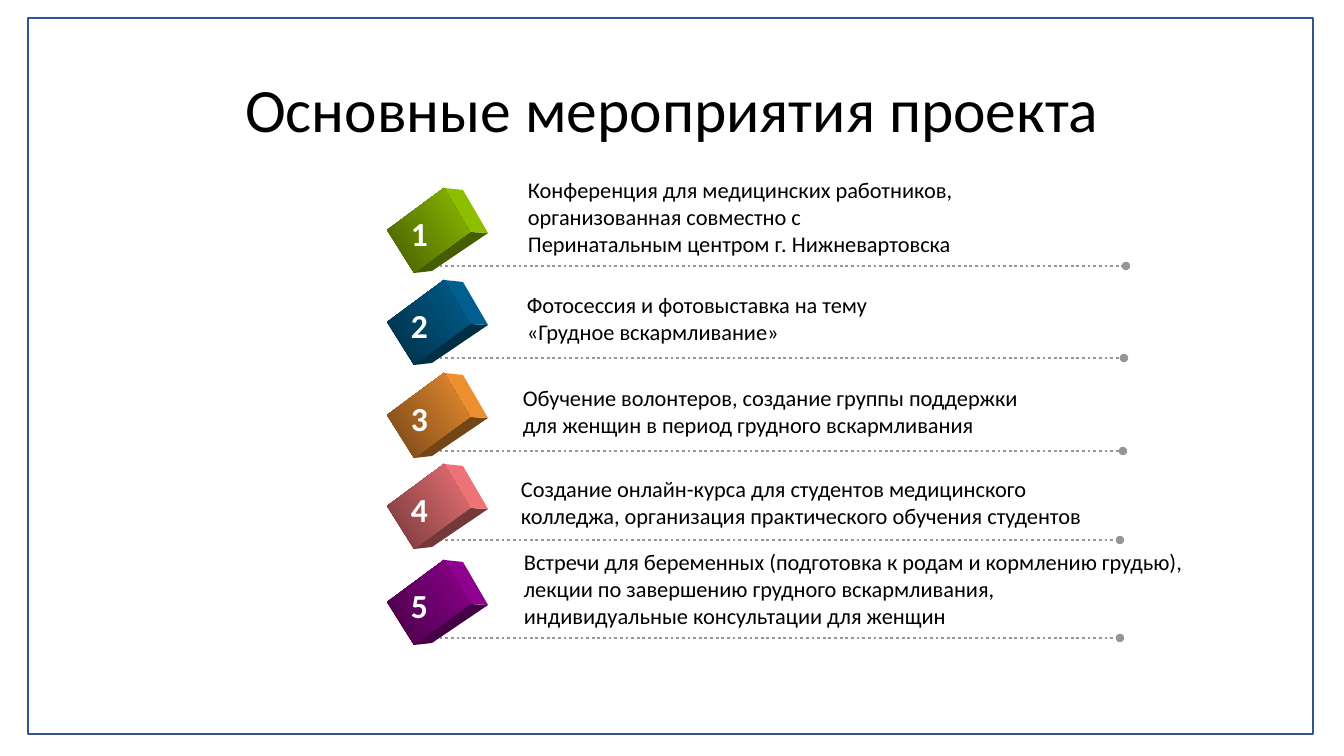
from lxml.etree import SubElement
from pptx import Presentation
from pptx.dml.color import RGBColor
from pptx.enum.dml import MSO_LINE_DASH_STYLE as DASH
from pptx.enum.shapes import MSO_CONNECTOR as CONN, MSO_SHAPE as SHAPE
from pptx.enum.text import MSO_ANCHOR as ANCHOR, PP_ALIGN as ALIGN
from pptx.oxml.ns import qn
from pptx.util import Pt

SCALE = 914400 / 100.8


def px(n):
    return round(n * SCALE)


def rgb(color):
    return RGBColor.from_string(color)


def shade(color, factor):
    return "".join(f"{round(v * factor):02X}" for v in bytes.fromhex(color))


class Deck:
    font = "Calibri"
    black, white, grey, blue = "000000", "FFFFFF", "969696", "325491"

    def __init__(self, prs):
        self.slide = prs.slides.add_slide(prs.slide_layouts[6])
        self.shapes = self.slide.shapes

    def group(self):
        self.shapes = self.slide.shapes.add_group_shape().shapes

    def frame(self, x, y, w, h):
        sp = self.shapes.add_shape(SHAPE.RECTANGLE, *map(px, (x, y, w, h)))
        sp.shadow.inherit = False
        sp.fill.solid()
        sp.fill.fore_color.rgb = rgb(self.white)
        clr = sp.fill._xPr.find(qn("a:solidFill"))[0]
        SubElement(clr, qn("a:alpha"), val="77000")
        sp.line.color.rgb = rgb(self.blue)
        sp.line.width = Pt(1)

    def text(self, x, y, w, h, lines, size, color=black, bold=False,
             align=ALIGN.LEFT, anchor=ANCHOR.TOP, spacing=1.0):
        tf = self.shapes.add_textbox(*map(px, (x, y, w, h))).text_frame
        tf.word_wrap = True
        tf.vertical_anchor = anchor
        for i, line in enumerate(lines):
            p = tf.add_paragraph() if i else tf.paragraphs[0]
            p.alignment = align
            p.line_spacing = spacing
            r = p.add_run()
            r.text = line
            r.font.name = self.font
            r.font.size = Pt(size)
            r.font.bold = bold
            r.font.color.rgb = rgb(color)

    def dotted_line(self, x1, x2, y):
        c = self.shapes.add_connector(CONN.STRAIGHT, *map(px, (x1, y, x2, y)))
        c.line.color.rgb = rgb(self.grey)
        c.line.width = Pt(2)
        c.line.dash_style = DASH.ROUND_DOT
        SubElement(c.line._get_or_add_ln(), qn("a:tailEnd"), type="oval")
        SubElement(c._element.spPr, qn("a:effectLst"))

    def face(self, points, colors):
        fb = self.shapes.build_freeform(*points[0], scale=SCALE)
        fb.add_line_segments(points[1:], close=True)
        sp = fb.convert_to_shape()
        sp.shadow.inherit = False
        sp.line.fill.background()
        if len(colors) == 1:
            sp.fill.solid()
            sp.fill.fore_color.rgb = rgb(colors[0])
            return
        sp.fill.gradient()
        sp.fill.gradient_angle = 33
        for stop, color in zip(sp.fill.gradient_stops, colors):
            stop.color.rgb = rgb(color)

    def block(self, x, y, color):
        left, top, inner, bottom, back, right, low = [
            (x + dx, y + dy) for dx, dy in
            ((0, 42), (57, 0), (83, 44), (27, 85), (76, 2), (101, 45), (45, 83))]
        self.face((bottom, inner, right, low), [shade(color, 0.45)])
        self.face((top, back, right, inner), [shade(color, 0.93)])
        self.face((left, top, inner, bottom),
                  [shade(color, 0.45), shade(color, 0.92)])

    def item(self, number, color, top, line_y, line_end, x, y, w, lines):
        self.group()
        self.dotted_line(434, line_end, line_y)
        self.block(387, top, color)
        self.text(x, y, w, 10 + 27 * len(lines), lines, 16)
        self.text(401, top + 20, 50, 50, [str(number)], 24, self.white, True)


ITEMS = [
    ("99CC00", 188, 266, 1126, 518, 171, 595,
     ["Конференция для медицинских работников,",
      "организованная совместно с",
      "Перинатальным центром г. Нижневартовска"]),
    ("006699", 280, 358, 1124, 517, 286, 483,
     ["Фотосессия и фотовыставка на тему", "«Грудное вскармливание»"]),
    ("FF9933", 373, 451, 1123, 513, 379, 685,
     ["Обучение волонтеров, создание группы поддержки",
      "для женщин в период грудного вскармливания"]),
    ("FF7C80", 464, 540, 1120, 511, 470, 755,
     ["Создание онлайн-курса для студентов медицинского",
      "колледжа, организация практического обучения студентов"]),
    ("990099", 560, 638, 1120, 514, 543, 686,
     ["Встречи для беременных (подготовка к родам и кормлению грудью),",
      "лекции по завершению грудного вскармливания,",
      "индивидуальные консультации для женщин"]),
]


def main():
    prs = Presentation()
    prs.slide_width, prs.slide_height = px(1344), px(756)
    s = Deck(prs)
    s.frame(28, 18, 1285, 716)
    s.text(93, 40, 1159, 146, ["Основные мероприятия проекта"], 44,
           align=ALIGN.CENTER, anchor=ANCHOR.MIDDLE, spacing=0.9)
    for number, item in enumerate(ITEMS, 1):
        s.item(number, *item)
    prs.save("out.pptx")


if __name__ == "__main__":
    main()
